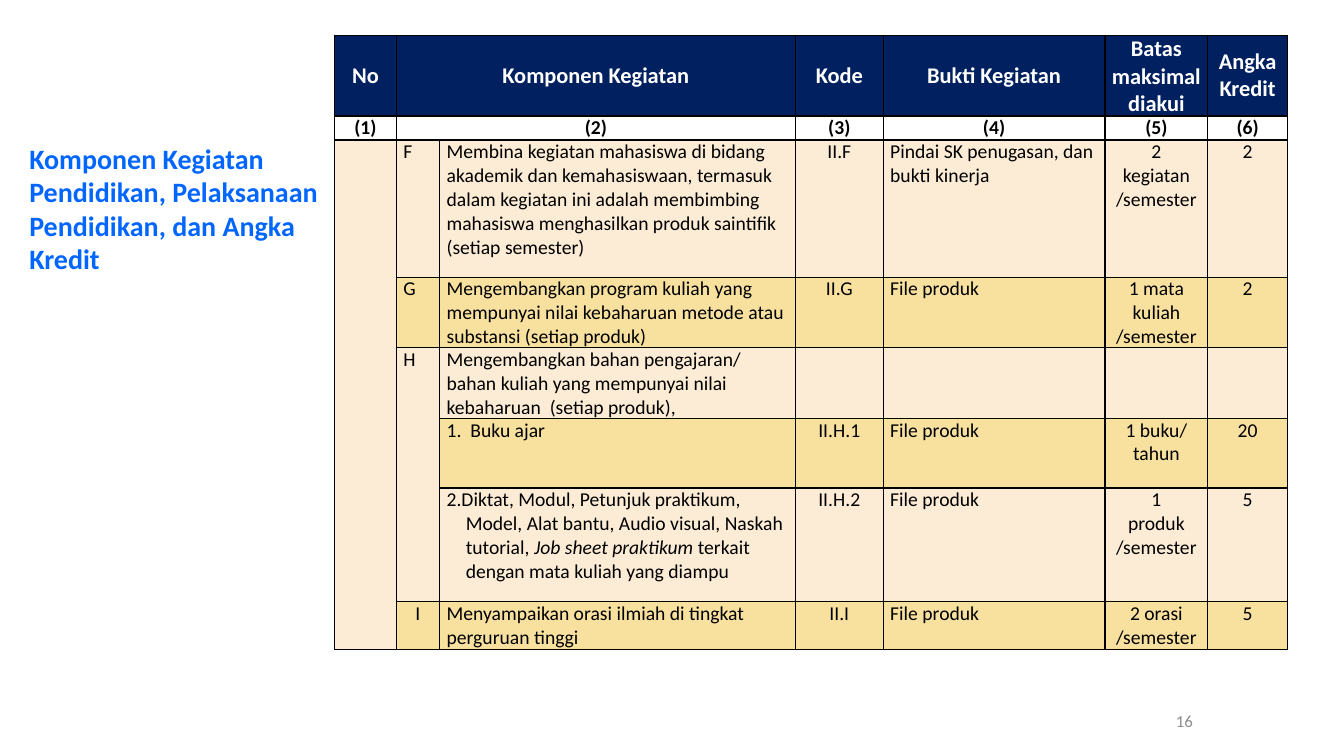
from lxml import etree
from pptx import Presentation
from pptx.dml.color import RGBColor
from pptx.enum.text import MSO_ANCHOR, MSO_AUTO_SIZE, PP_ALIGN
from pptx.oxml.ns import qn
from pptx.util import Inches, Pt

LEFT, CENTER, RIGHT = PP_ALIGN.LEFT, PP_ALIGN.CENTER, PP_ALIGN.RIGHT
TOP, MIDDLE = MSO_ANCHOR.TOP, MSO_ANCHOR.MIDDLE

# Content: a list in a cell holds its paragraphs, *...* marks italics
TITLE = "Komponen Kegiatan Pendidikan, Pelaksanaan Pendidikan, dan Angka Kredit"
PAGE = "16"
ROWS = [
    ("No", "Komponen Kegiatan", "", "Kode", "Bukti Kegiatan",
     "Batas maksimal diakui", "Angka Kredit"),
    ("(1)", "(2)", "", "(3)", "(4)", "(5)", "(6)"),
    ("", "F", "Membina kegiatan mahasiswa di bidang akademik dan kemahasiswaan, "
     "termasuk dalam kegiatan ini adalah membimbing mahasiswa menghasilkan "
     "produk saintifik (setiap semester)",
     "II.F", "Pindai SK penugasan, dan bukti kinerja", "2 kegiatan /semester", "2"),
    ("", "G", "Mengembangkan program kuliah yang mempunyai nilai kebaharuan "
     "metode atau substansi (setiap produk)",
     "II.G", "File produk", "1 mata kuliah /semester", "2"),
    ("", "H", "Mengembangkan bahan pengajaran/ bahan kuliah yang mempunyai nilai "
     "kebaharuan  (setiap produk),", "", "", "", ""),
    ("", "", "1.  Buku ajar", "II.H.1", "File produk", ["1 buku/", "tahun"], "20"),
    ("", "", "2.Diktat, Modul, Petunjuk praktikum, Model, Alat bantu, Audio visual, "
     "Naskah tutorial, *Job sheet praktikum* terkait dengan mata kuliah yang diampu",
     "II.H.2", "File produk", "1 produk /semester", "5"),
    ("", "I", "Menyampaikan orasi ilmiah di tingkat perguruan tinggi",
     "II.I", "File produk", ["2 orasi", "/semester"], "5"),
]
MERGES = [((0, 1), (0, 2)), ((1, 1), (1, 2)), ((2, 0), (7, 0)), ((4, 1), (6, 1))]
COL_WIDTHS = [0.61, 0.43, 3.53, 0.87, 2.2, 1.02, 0.79]
ROW_HEIGHTS = [0.79, 0.24, 1.36, 0.7, 0.7, 0.69, 1.13, 0.47]
BODY_ALIGN = [LEFT, LEFT, LEFT, CENTER, LEFT, CENTER, CENTER]
HANGING_CELL, CENTERED_CELL = (6, 2), (7, 1)

THEME = {
    "font": "Calibri",
    "title": (20, "0066FF"), "header": (16, "FFFFFF"),
    "body": (14, "000000"), "page": (12, "8C8C8C"),
    "header_fill": "002060", "bands": ("FCECD5", "F8E19F"), "border": "000000",
}


def style(p, role, align=LEFT, bold=False):
    size, color = THEME[role]
    p.alignment = align
    p.font.name, p.font.size, p.font.bold = THEME["font"], Pt(size), bold
    p.font.color.rgb = RGBColor.from_string(color)


def add_borders(cell):
    tcPr = cell._tc.get_or_add_tcPr()
    for side in ("a:lnL", "a:lnR", "a:lnT", "a:lnB"):
        ln = etree.SubElement(tcPr, qn(side), w=str(Pt(1)))
        fill = etree.SubElement(ln, qn("a:solidFill"))
        etree.SubElement(fill, qn("a:srgbClr"), val=THEME["border"])


def fill_cell(cell, row, col, content):
    add_borders(cell)
    if row == 1:
        cell.fill.background()
    else:
        band = THEME["bands"][row % 2 if col else 0]
        cell.fill.solid()
        cell.fill.fore_color.rgb = RGBColor.from_string(
            THEME["header_fill"] if row == 0 else band)
    cell.vertical_anchor = MIDDLE if row == 0 else TOP
    cell.margin_left = cell.margin_right = Inches(0.03 if row < 2 else 0.07)
    cell.margin_top = cell.margin_bottom = 0
    centered = row < 2 or (row, col) == CENTERED_CELL
    tf = cell.text_frame
    for i, text in enumerate(content if isinstance(content, list) else [content]):
        p = tf.add_paragraph() if i else tf.paragraphs[0]
        if (row, col) == HANGING_CELL:
            pPr = p._p.get_or_add_pPr()
            pPr.set("marL", str(Inches(0.19)))
            pPr.set("indent", str(Inches(-0.19)))
        style(p, "body" if row else "header",
              CENTER if centered else BODY_ALIGN[col], row < 2)
        for j, part in enumerate(text.split("*")):
            if part:
                r = p.add_run()
                r.text = part
                if j % 2:
                    r.font.italic = True


prs = Presentation()
prs.slide_width, prs.slide_height = Inches(13.33), Inches(7.5)
s = prs.slides.add_slide(prs.slide_layouts[5])

# Title
title = s.shapes.title
title.left, title.top = Inches(0.19), Inches(1.35)
title.width, title.height = Inches(3.1), Inches(1.45)
tf = title.text_frame
tf.text = TITLE
tf.word_wrap = True
tf.auto_size = MSO_AUTO_SIZE.SHAPE_TO_FIT_TEXT
tf.vertical_anchor = TOP
style(tf.paragraphs[0], "title", bold=True)

# Credit table
table = s.shapes.add_table(
    len(ROWS), len(COL_WIDTHS), Inches(3.32), Inches(0.35),
    Inches(sum(COL_WIDTHS)), Inches(sum(ROW_HEIGHTS))).table
table.first_row = table.horz_banding = False
for column, width in zip(table.columns, COL_WIDTHS):
    column.width = Inches(width)
for table_row, height in zip(table.rows, ROW_HEIGHTS):
    table_row.height = Inches(height)
for row, contents in enumerate(ROWS):
    for col, content in enumerate(contents):
        fill_cell(table.cell(row, col), row, col, content)
for first, last in MERGES:
    table.cell(*first).merge(table.cell(*last))

# Page number
page = s.shapes.add_textbox(Inches(9.78), Inches(6.95), Inches(2.15), Inches(0.4))
tf = page.text_frame
tf.text = PAGE
tf.word_wrap = True
tf.vertical_anchor = MIDDLE
style(tf.paragraphs[0], "page", RIGHT)

prs.save("out.pptx")
